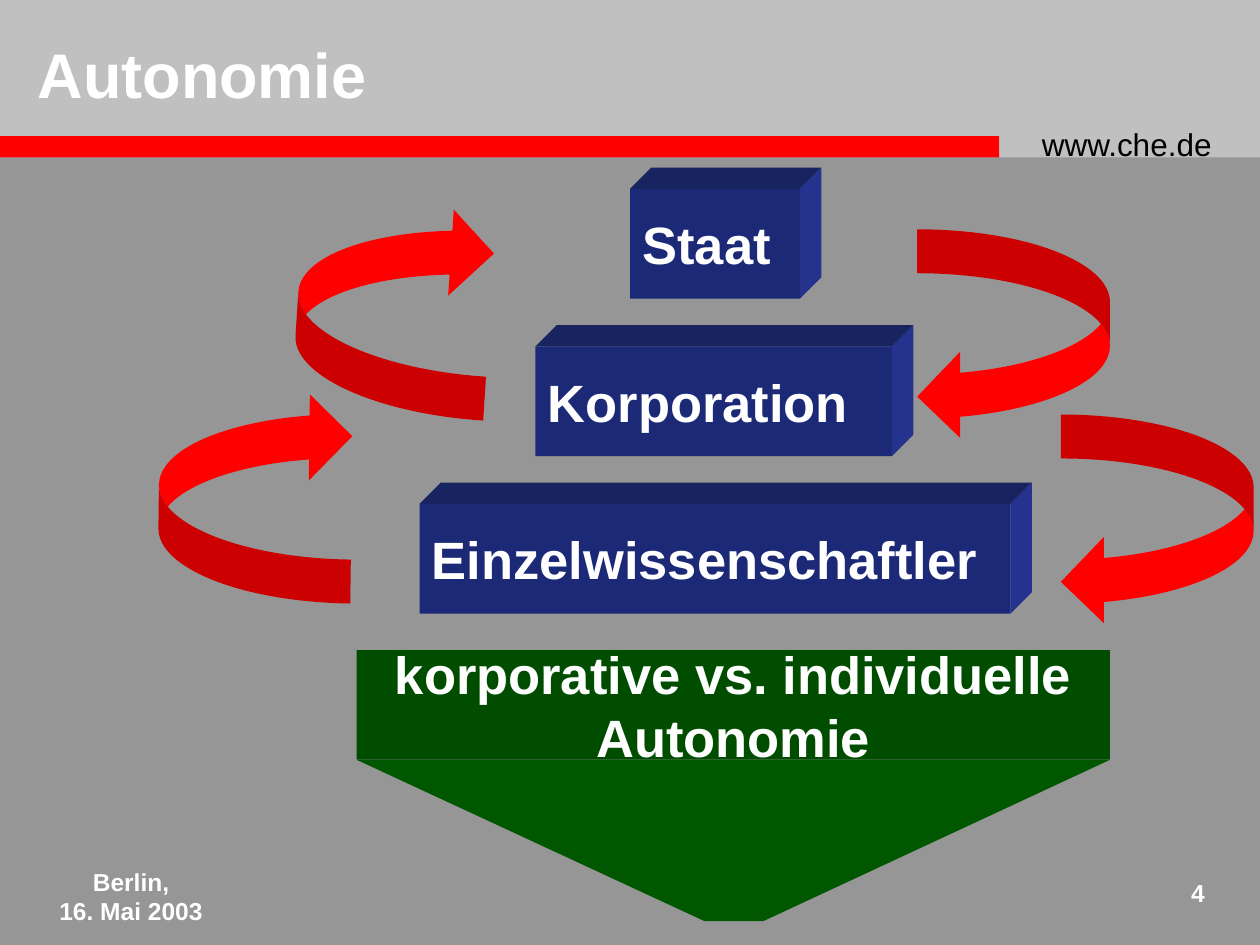
"""Build the slide on autonomy between state, corporation and scientist."""
from pptx import Presentation
from pptx.dml.color import RGBColor
from pptx.enum.shapes import MSO_SHAPE
from pptx.enum.text import MSO_ANCHOR, PP_ALIGN
from pptx.util import Inches, Pt

RECT = MSO_SHAPE.RECTANGLE
ARROW = MSO_SHAPE.CURVED_LEFT_ARROW
LEFT, CENTER, RIGHT = PP_ALIGN.LEFT, PP_ALIGN.CENTER, PP_ALIGN.RIGHT
TOP, MIDDLE = MSO_ANCHOR.TOP, MSO_ANCHOR.MIDDLE
COLORS = {
    "ground": "969696", "band": "C0C0C0", "red": "FF0000",
    "front": "1C2976", "lid": "18245F", "side": "25338F",
    "green": "004D00", "taper": "005700",
    "white": "FFFFFF", "black": "000000",
}
DEPTH = 0.17
HEIGHT = 0.87
BLOCKS = [
    ("Staat", 5, 1.5, 1.35),
    ("Korporation", 4.25, 2.75, 2.83),
    ("Einzelwissenschaftler", 3.33, 4, 4.69),
]
ARROWS = [(7.28, 1.82, 0), (8.42, 3.29, 0), (2.36, 1.62, 183.7), (1.26, 3.11, 180.7)]


def color(name):
    """Return the named colour."""
    return RGBColor.from_string(COLORS[name])


def paint(shape, name):
    """Give a shape a flat fill without line or shadow."""
    shape.shadow.inherit = False
    shape.fill.solid()
    shape.fill.fore_color.rgb = color(name)
    shape.line.fill.background()


def write(shape, lines, size, tone="white", bold=True, align=LEFT, anchor=TOP):
    """Write formatted lines into a shape."""
    frame = shape.text_frame
    frame.word_wrap = True
    frame.vertical_anchor = anchor
    frame.text = "\n".join(lines)
    style = {"name": "Arial", "size": Pt(size), "bold": bold}
    for para in frame.paragraphs:
        para.alignment = align
        for key, value in style.items():
            setattr(para.font, key, value)
        para.font.color.rgb = color(tone)


def add_form(slide, kind, box, fill):
    """Add a flat preset shape."""
    shape = slide.shapes.add_shape(kind, *map(Inches, box))
    paint(shape, fill)
    return shape


def add_face(slide, points, fill):
    """Add a flat polygon through the points."""
    first, *rest = [(Inches(x), Inches(y)) for x, y in points]
    form = slide.shapes.build_freeform(*first)
    form.add_line_segments(rest)
    paint(form.convert_to_shape(), fill)


def add_label(slide, box, lines, size, **style):
    """Add a text box."""
    write(slide.shapes.add_textbox(*map(Inches, box)), lines, size, **style)


def add_block(slide, label, left, top, width):
    """Add a labelled block with a lid and a right side."""
    right, base = left + width, top + HEIGHT
    far, back = right + DEPTH, top - DEPTH
    add_face(slide, [(left, top), (left + DEPTH, back), (far, back), (right, top)], "lid")
    add_face(slide, [(right, top), (far, back), (far, base - DEPTH), (right, base)], "side")
    front = add_form(slide, RECT, (left, top, width, HEIGHT), "front")
    write(front, [label], 30, anchor=MIDDLE)


def add_base(slide):
    """Add the green panel with its taper below."""
    left, top, width = 2.83, 5.16, 5.98
    base = top + HEIGHT
    add_face(slide, [(left, base), (left + width, base), (6.06, 7.31), (5.59, 7.31)], "taper")
    panel = add_form(slide, RECT, (left, top, width, HEIGHT), "green")
    write(panel, ["korporative vs. individuelle", "Autonomie"], 30,
          align=CENTER, anchor=MIDDLE)


def add_arrow(slide, left, top, angle):
    """Add a curved arrow turned by the angle."""
    arrow = add_form(slide, ARROW, (left, top, 1.53, 1.67), "red")
    for index, value in enumerate((0.228, 0.447, 0.223)):
        arrow.adjustments[index] = value
    arrow.rotation = angle


def add_title(slide, text):
    """Place and fill the title."""
    title = slide.shapes.title
    box = {"left": 0.2, "top": 0.21, "width": 5.73, "height": 0.75}
    for key, value in box.items():
        setattr(title, key, Inches(value))
    write(title, [text], 36, anchor=MIDDLE)
    slide.shapes.element.append(title.element)


def main():
    """Build and save the slide."""
    deck = Presentation()
    deck.slide_width, deck.slide_height = Inches(10), Inches(7.5)
    slide = deck.slides.add_slide(deck.slide_layouts[5])
    slide.background.fill.solid()
    slide.background.fill.fore_color.rgb = color("ground")
    add_form(slide, RECT, (0, 0, 10, 1.25), "band")
    add_form(slide, RECT, (0, 1.08, 7.93, 0.17), "red")
    add_label(slide, (8.17, 0.94, 1.75, 0.4), ["www.che.de"], 18, tone="black", bold=False)
    add_label(slide, (0, 6.83, 2.08, 0.5), ["Berlin,", "16. Mai 2003"], 14, align=CENTER)
    add_label(slide, (9.08, 6.92, 0.58, 0.42), ["4"], 14, align=RIGHT)
    add_title(slide, "Autonomie")
    for block in BLOCKS:
        add_block(slide, *block)
    add_base(slide)
    for arrow in ARROWS:
        add_arrow(slide, *arrow)
    deck.save("out.pptx")


if __name__ == "__main__":
    main()
